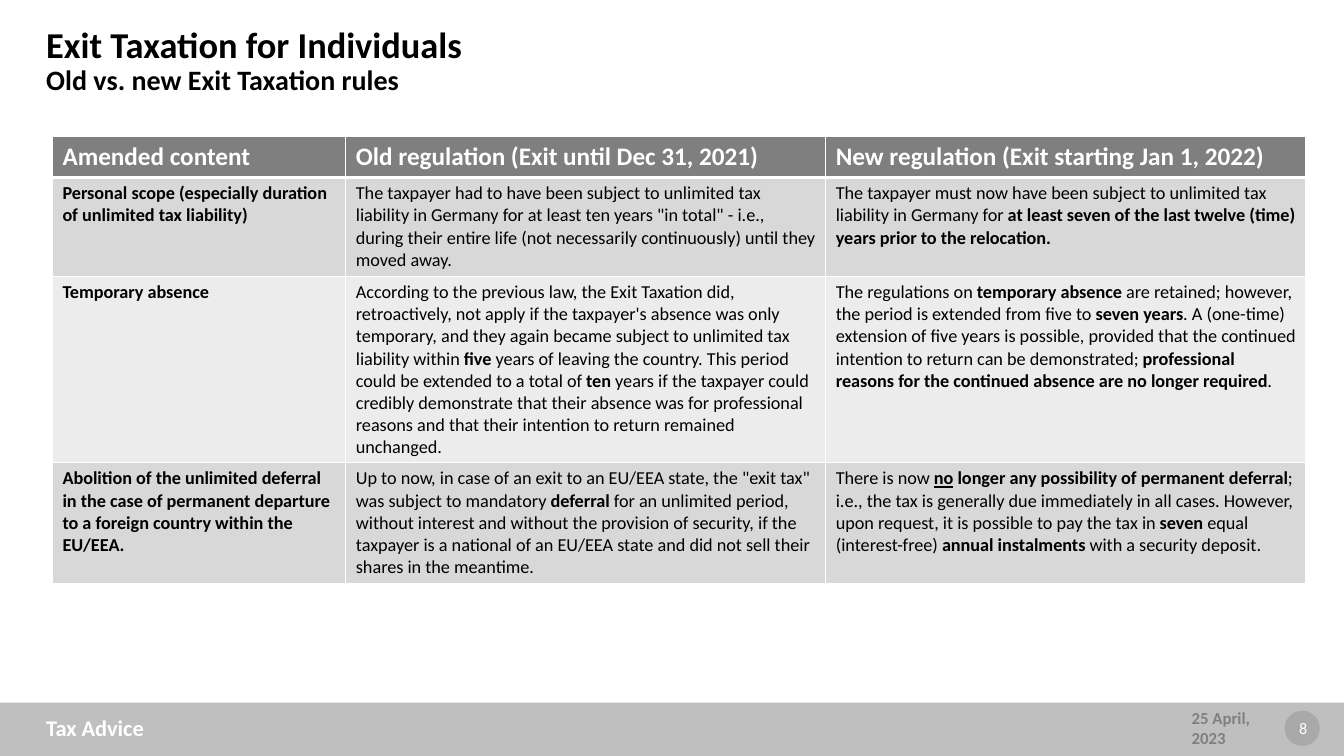
"""Build the slide comparing old and new exit taxation rules."""
import dataclasses
import typing

import lxml.etree
import pptx
import pptx.dml.color
import pptx.enum.shapes
import pptx.enum.text
import pptx.oxml.ns
import pptx.util

Inches = pptx.util.Inches
Align = pptx.enum.text.PP_ALIGN
Anchor = pptx.enum.text.MSO_ANCHOR
Shape = pptx.enum.shapes.MSO_SHAPE
qualify = pptx.oxml.ns.qn

FONT = "Calibri"
COLORS = {
    "white": "FFFFFF", "black": "000000", "bar": "BFBFBF", "gray": "808080",
    "header": "7F7F7F", "dark row": "D8D8D8", "light row": "ECECEC",
}


@dataclasses.dataclass(frozen=True)
class Span:
    text: str
    bold: bool = False
    underline: bool = False
    size: typing.Optional[float] = None
    new_line: bool = False


@dataclasses.dataclass(frozen=True)
class Label:
    left: float
    top: float
    width: float
    height: float
    spans: tuple[Span, ...]
    size: float
    color: str
    align: typing.Optional[Align] = None
    line_spacing: typing.Optional[float] = None


@dataclasses.dataclass(frozen=True)
class Panel:
    kind: Shape
    left: float
    top: float
    width: float
    height: float
    color: str
    opacity: int = 100


@dataclasses.dataclass(frozen=True)
class Row:
    height: float
    fill: str
    cells: tuple[tuple[Span, ...], ...]
    size: float = 13
    color: str = "black"
    border_bottom: float = 1
    spacing: tuple[float, ...] = (6, 3, 3)


def bold(text: str, **options) -> Span:
    return Span(text, bold=True, **options)


PANELS = (
    Panel(Shape.RECTANGLE, -0.08, 6.97, 13.47, 0.55, "bar"),
    Panel(Shape.OVAL, 12.74, 7.05, 0.35, 0.35, "gray", 34),
)
LABELS = (
    Label(0.36, 7.02, 4.5, 0.4, (bold("Tax Advice"),), 16, "white"),
    Label(11.72, 7.02, 1.04, 0.4, (bold("25 April, 2023"),), 12, "gray"),
    Label(0.36, 0, 12.38, 1.23, (
        bold("Exit Taxation for Individuals"),
        bold("Old vs. new Exit Taxation rules", size=20, new_line=True),
    ), 26, "black", line_spacing=0.9),
    Label(12.67, 7.02, 0.51, 0.4, (Span("8"),), 11.5, "white", Align.CENTER),
)
COLUMN_WIDTHS = (2.91, 4.76, 4.76)
ROWS = (
    Row(0.41, "header", (
        (bold("Amended content"),),
        (bold("Old regulation (Exit until Dec 31, 2021)"),),
        (bold("New regulation (Exit starting Jan 1, 2022)"),),
    ), 18, "white", 3, (0, 0, 0)),
    Row(0.98, "dark row", (
        (bold("Personal scope (especially duration of unlimited tax liability)"),),
        (Span("The taxpayer had to have been subject to unlimited tax liability in Germany for at "
              "least ten years \"in total\" - i.e., during their entire life (not necessarily "
              "continuously) until they moved away."),),
        (Span("The taxpayer must now have been subject to unlimited tax liability in Germany for "),
         bold("at least seven of the last twelve (time) years prior to the relocation.")),
    )),
    Row(1.85, "light row", (
        (bold("Temporary absence"),),
        (Span("According to the previous law, the Exit Taxation did, retroactively, not apply if "
              "the taxpayer's absence was only temporary, and they again became subject to "
              "unlimited tax liability within "),
         bold("five"),
         Span(" years of leaving the country. This period could be extended to a total of "),
         bold("ten"),
         Span(" years if the taxpayer could credibly demonstrate that their absence was for "
              "professional reasons and that their intention to return remained unchanged.")),
        (Span("The regulations on "),
         bold("temporary absence "),
         Span("are retained; however, the period is extended from five to "),
         bold("seven years"),
         Span(". A (one-time) extension of five years is possible, provided that the continued "
              "intention to return can be demonstrated; "),
         bold("professional reasons for the continued absence are no longer required"),
         Span(".")),
    )),
    Row(1.2, "dark row", (
        (bold("Abolition of the unlimited deferral in the case of permanent departure to a "
              "foreign country within the EU/EEA."),),
        (Span("Up to now, in case of an exit to an EU/EEA state, the \"exit tax\" was subject to "
              "mandatory "),
         bold("deferral"),
         Span(" for an unlimited period, without interest and without the provision of security, "
              "if the taxpayer is a national of an EU/EEA state and did not sell their shares in "
              "the meantime.")),
        (Span("There is now "),
         bold("no", underline=True),
         bold(" longer any possibility of permanent deferral"),
         Span("; i.e., the tax is generally due immediately in all cases. However, upon request, "
              "it is possible to pay the tax in "),
         bold("seven"),
         Span(" equal (interest-free) "),
         bold("annual instalments "),
         Span("with a security deposit.")),
    )),
)


def rgb(name: str) -> pptx.dml.color.RGBColor:
    return pptx.dml.color.RGBColor.from_string(COLORS[name])


def write_text(frame, spans: tuple[Span, ...], *, size: float, color: str,
               align: typing.Optional[Align] = None, space_after: float = 0,
               line_spacing: typing.Optional[float] = None) -> None:
    frame.word_wrap = True
    para = frame.paragraphs[0]
    para.alignment = align
    para.space_after = pptx.util.Pt(space_after)
    para.line_spacing = line_spacing
    for span in spans:
        if span.new_line:
            para.add_line_break()
        run = para.add_run()
        run.text = span.text
        run.font.name = FONT
        run.font.size = pptx.util.Pt(span.size or size)
        run.font.bold = span.bold
        run.font.underline = span.underline
        run.font.color.rgb = rgb(color)


def add_panel(page, panel: Panel) -> None:
    shape = page.shapes.add_shape(panel.kind, *map(
        Inches, (panel.left, panel.top, panel.width, panel.height)))
    shape.shadow.inherit = False
    shape.line.fill.background()
    shape.fill.solid()
    shape.fill.fore_color.rgb = rgb(panel.color)
    if panel.opacity < 100:
        tint = shape.fill._xPr.find(".//" + qualify("a:srgbClr"))
        lxml.etree.SubElement(tint, qualify("a:alpha"), val=str(panel.opacity * 1000))


def add_label(page, label: Label) -> None:
    box = page.shapes.add_textbox(*map(
        Inches, (label.left, label.top, label.width, label.height)))
    box.text_frame.vertical_anchor = Anchor.MIDDLE
    write_text(box.text_frame, label.spans, size=label.size, color=label.color,
               align=label.align, line_spacing=label.line_spacing)


def add_borders(cell, bottom: float) -> None:
    properties = cell._tc.get_or_add_tcPr()
    for index, (side, width) in enumerate((("L", 1), ("R", 1), ("T", 1), ("B", bottom))):
        line = lxml.etree.Element(qualify(f"a:ln{side}"), w=str(pptx.util.Pt(width)))
        fill = lxml.etree.SubElement(line, qualify("a:solidFill"))
        lxml.etree.SubElement(fill, qualify("a:srgbClr"), val=COLORS["white"])
        properties.insert(index, line)


def add_rules_table(page) -> None:
    table = page.shapes.add_table(
        len(ROWS), len(COLUMN_WIDTHS), Inches(0.52), Inches(1.35),
        Inches(sum(COLUMN_WIDTHS)), Inches(sum(row.height for row in ROWS))).table
    for column, width in zip(table.columns, COLUMN_WIDTHS):
        column.width = Inches(width)
    for row_index, row in enumerate(ROWS):
        table.rows[row_index].height = Inches(row.height)
        for column_index, spans in enumerate(row.cells):
            cell = table.cell(row_index, column_index)
            cell.fill.solid()
            cell.fill.fore_color.rgb = rgb(row.fill)
            add_borders(cell, row.border_bottom)
            write_text(cell.text_frame, spans, size=row.size, color=row.color,
                       space_after=row.spacing[column_index])


def main() -> None:
    deck = pptx.Presentation()
    deck.slide_width, deck.slide_height = Inches(13.33), Inches(7.5)
    page = deck.slides.add_slide(deck.slide_layouts[6])
    for panel in PANELS:
        add_panel(page, panel)
    for label in LABELS:
        add_label(page, label)
    add_rules_table(page)
    deck.save("out.pptx")


if __name__ == "__main__":
    main()
